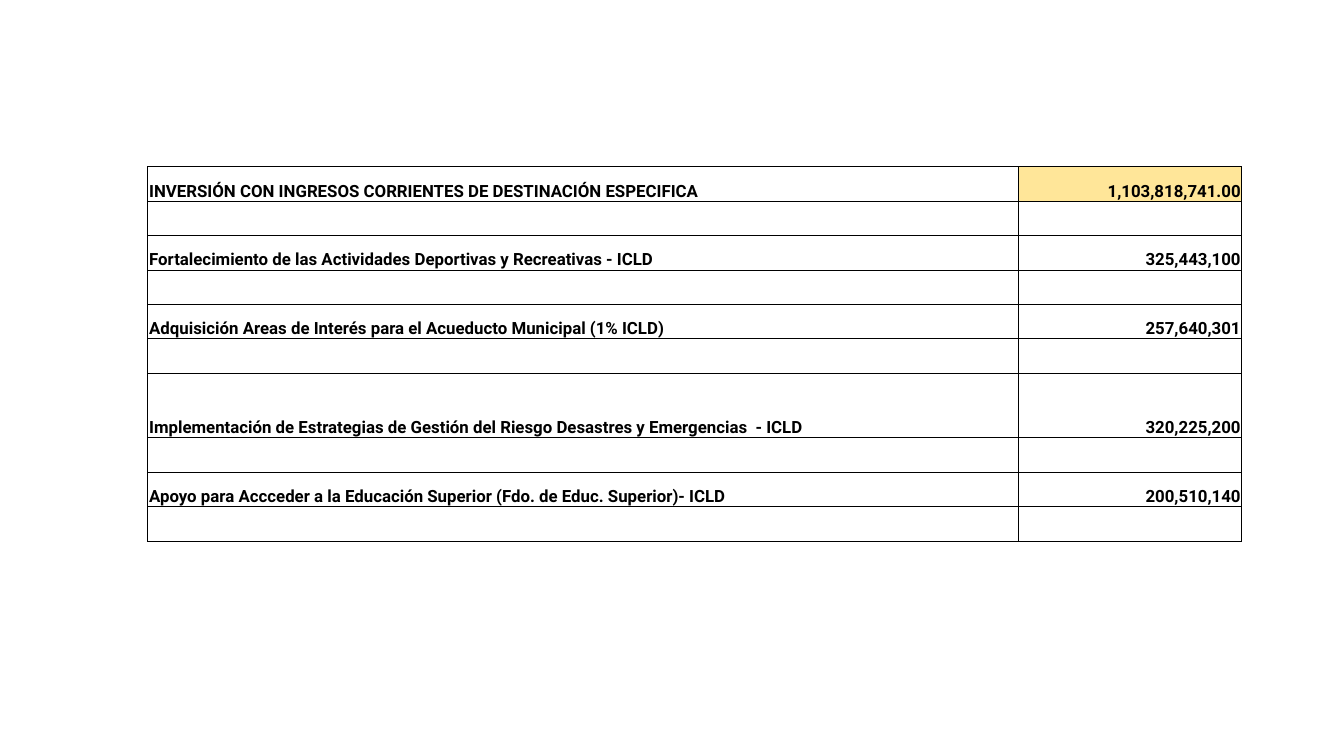
from lxml import etree
from pptx import Presentation
from pptx import util as u
from pptx.dml.color import RGBColor
from pptx.enum import text
from pptx.oxml.ns import qn

FONT = "Roboto"
FONT_SIZE = 9
BLACK = "000000"
TOTAL_FILL = "FFE699"
BORDER_WIDTH = 0.5

COLUMN_WIDTHS = [6.48, 1.66]
TABLE_HEIGHT = 2.79
TALL_ROW = 6
TALL_HEIGHT = 0.48

INVESTMENTS = [
    ("INVERSIÓN CON INGRESOS CORRIENTES DE DESTINACIÓN ESPECIFICA", "1,103,818,741.00"),
    ("Fortalecimiento de las Actividades Deportivas y Recreativas - ICLD", "325,443,100"),
    ("Adquisición Areas de Interés para el Acueducto Municipal (1% ICLD)", "257,640,301"),
    ("Implementación de Estrategias de Gestión del Riesgo Desastres y Emergencias  - ICLD",
     "320,225,200"),
    ("Apoyo para Accceder a la Educación Superior (Fdo. de Educ. Superior)- ICLD",
     "200,510,140"),
]


def color(hex_code):
    return RGBColor.from_string(hex_code)


def add_borders(cell):
    properties = cell._tc.get_or_add_tcPr()
    for side in ("lnL", "lnR", "lnT", "lnB"):
        line = etree.SubElement(properties, qn(f"a:{side}"), w=str(u.Pt(BORDER_WIDTH)))
        fill = etree.SubElement(line, qn("a:solidFill"))
        etree.SubElement(fill, qn("a:srgbClr"), val=BLACK)


def style_cell(cell, fill=None):
    add_borders(cell)
    if fill:
        cell.fill.solid()
        cell.fill.fore_color.rgb = color(fill)
    else:
        cell.fill.background()
    cell.margin_left = cell.margin_right = cell.margin_top = u.Inches(0.01)
    cell.margin_bottom = 0
    cell.vertical_anchor = text.MSO_ANCHOR.BOTTOM


def write_cell(cell, content, align):
    paragraph = cell.text_frame.paragraphs[0]
    paragraph.alignment = align
    run = paragraph.add_run()
    run.text = content
    run.font.name = FONT
    run.font.size = u.Pt(FONT_SIZE)
    run.font.bold = True
    run.font.color.rgb = color(BLACK)


def keep_cell_low(cell):
    """Give an empty cell the small text size so its row does not grow."""
    paragraph = cell.text_frame.paragraphs[0]._p
    paragraph.get_or_add_endParaRPr().set("sz", str(FONT_SIZE * 100))


def add_investment_table(slide):
    """Each investment takes one row, followed by an empty one."""
    row_count = 2 * len(INVESTMENTS)
    table = slide.shapes.add_table(
        row_count, 2, u.Inches(1.1), u.Inches(1.24),
        u.Inches(sum(COLUMN_WIDTHS)), u.Inches(TABLE_HEIGHT)).table
    table.first_row = table.horz_banding = False
    for column, width in zip(table.columns, COLUMN_WIDTHS):
        column.width = u.Inches(width)

    short_height = (TABLE_HEIGHT - TALL_HEIGHT) / (row_count - 1)
    for index, row in enumerate(table.rows):
        row.height = u.Inches(TALL_HEIGHT if index == TALL_ROW else short_height)
        label, amount = row.cells
        style_cell(label)
        style_cell(amount, TOTAL_FILL if index == 0 else None)
        if index % 2:
            keep_cell_low(label)
            keep_cell_low(amount)
        else:
            name, value = INVESTMENTS[index // 2]
            write_cell(label, name, text.PP_ALIGN.LEFT)
            write_cell(amount, value, text.PP_ALIGN.RIGHT)


def main():
    deck = Presentation()
    deck.slide_width = u.Inches(10)
    deck.slide_height = deck.slide_width * 9 // 16
    slide = deck.slides.add_slide(deck.slide_layouts[6])
    add_investment_table(slide)
    deck.save("out.pptx")


if __name__ == "__main__":
    main()
